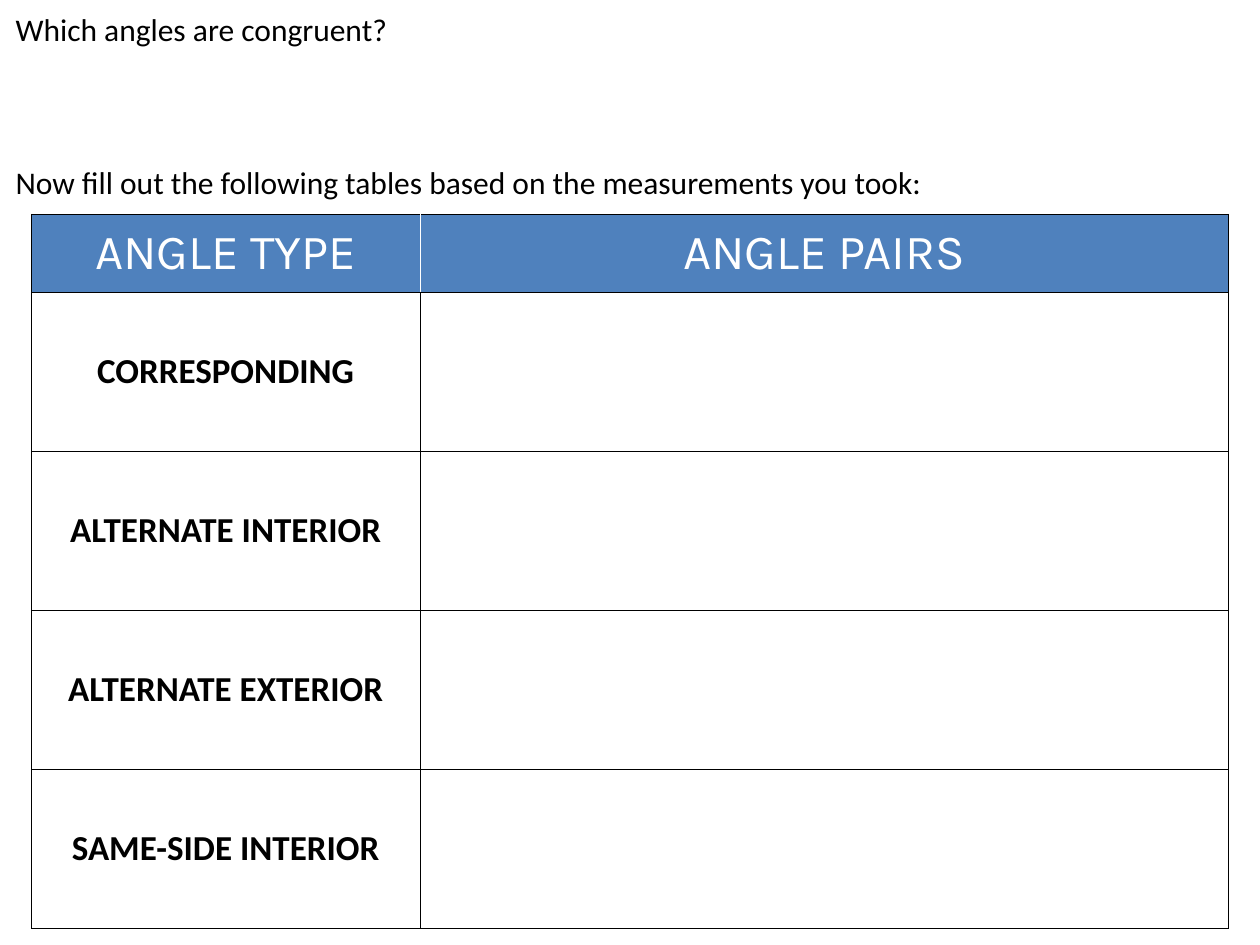
from lxml import etree
from pptx import Presentation
from pptx.dml.color import RGBColor
from pptx.enum.text import MSO_ANCHOR, PP_ALIGN
from pptx.oxml.ns import qn
from pptx.util import Pt

MIDDLE = MSO_ANCHOR.MIDDLE
CENTER = PP_ALIGN.CENTER
JUSTIFY = PP_ALIGN.JUSTIFY
BLACK, WHITE, BLUE = "000000", "FFFFFF", "4F81BD"

PROMPT = {"name": "Calibri", "size": Pt(18), "bold": False}
HEADING = {"name": "Karla", "size": Pt(28), "bold": False}
LABEL = {"name": "Calibri", "size": Pt(20), "bold": True}

QUESTIONS = [
    "Which angles are congruent?",
    "Now fill out the following tables based on the measurements you took:",
]
ROWS = [
    ["ANGLE TYPE", "ANGLE PAIRS"],
    ["CORRESPONDING", ""],
    ["ALTERNATE INTERIOR", ""],
    ["ALTERNATE EXTERIOR", ""],
    ["SAME-SIDE INTERIOR", ""],
]


def color(value):
    return RGBColor.from_string(value)


def assign(target, values):
    for name, value in values.items():
        setattr(target, name, value)


class Worksheet:
    def __init__(self, deck):
        self.slide = deck.slides.add_slide(deck.slide_layouts[6])
        self.border_width = Pt(0.5)

    def add_text(self, para, text, style, ink, alignment):
        para.alignment = alignment
        span = para.add_run()
        span.text = text
        assign(span.font, style)
        span.font.color.rgb = color(ink)

    def prompts(self, lines, left, top, width, height, gap):
        frame = self.slide.shapes.add_textbox(
            Pt(left), Pt(top), Pt(width), Pt(height)).text_frame
        inset = Pt(2.9)
        assign(frame, {"word_wrap": True, "margin_left": inset, "margin_right": inset,
                       "margin_top": inset, "margin_bottom": inset})
        for index, line in enumerate(lines):
            para = frame.add_paragraph() if index else frame.paragraphs[0]
            para.space_before = Pt(gap if index else 0)
            self.add_text(para, line, PROMPT, BLACK, JUSTIFY)

    def borders(self, cell, inks):
        properties = cell._tc.get_or_add_tcPr()
        for side, ink in inks.items():
            line = etree.SubElement(properties, qn(f"a:ln{side}"), w=str(self.border_width))
            fill = etree.SubElement(line, qn("a:solidFill"))
            etree.SubElement(fill, qn("a:srgbClr"), val=ink)

    def table(self, rows, left, top, widths, heights):
        table = self.slide.shapes.add_table(
            len(rows), len(widths), Pt(left), Pt(top),
            Pt(sum(widths)), Pt(sum(heights))).table
        table.horz_banding = False
        for column, width in zip(table.columns, widths):
            column.width = Pt(width)
        for row, height in zip(table.rows, heights):
            row.height = Pt(height)
        for r, texts in enumerate(rows):
            for c, text in enumerate(texts):
                self.cell(table.cell(r, c), text, r == 0, c == 0)

    def cell(self, cell, text, is_header, is_first):
        inks = dict.fromkeys("LRTB", BLACK)
        if is_header:
            inks["R" if is_first else "L"] = WHITE
        self.borders(cell, inks)
        cell.vertical_anchor = MIDDLE
        if is_header:
            cell.fill.solid()
            cell.fill.fore_color.rgb = color(BLUE)
        else:
            cell.fill.background()
        if text:
            style, ink = (HEADING, WHITE) if is_header else (LABEL, BLACK)
            self.add_text(cell.text_frame.paragraphs[0], text, style, ink, CENTER)


def main():
    deck = Presentation()
    assign(deck, {"slide_width": Pt(720), "slide_height": Pt(540)})
    sheet = Worksheet(deck)
    sheet.prompts(QUESTIONS, 6, 3, 708, 111, gap=65.5)
    sheet.table(ROWS, 18, 122.4, [222, 462], [44.6] + [90.9] * 4)
    deck.save("out.pptx")


if __name__ == "__main__":
    main()
